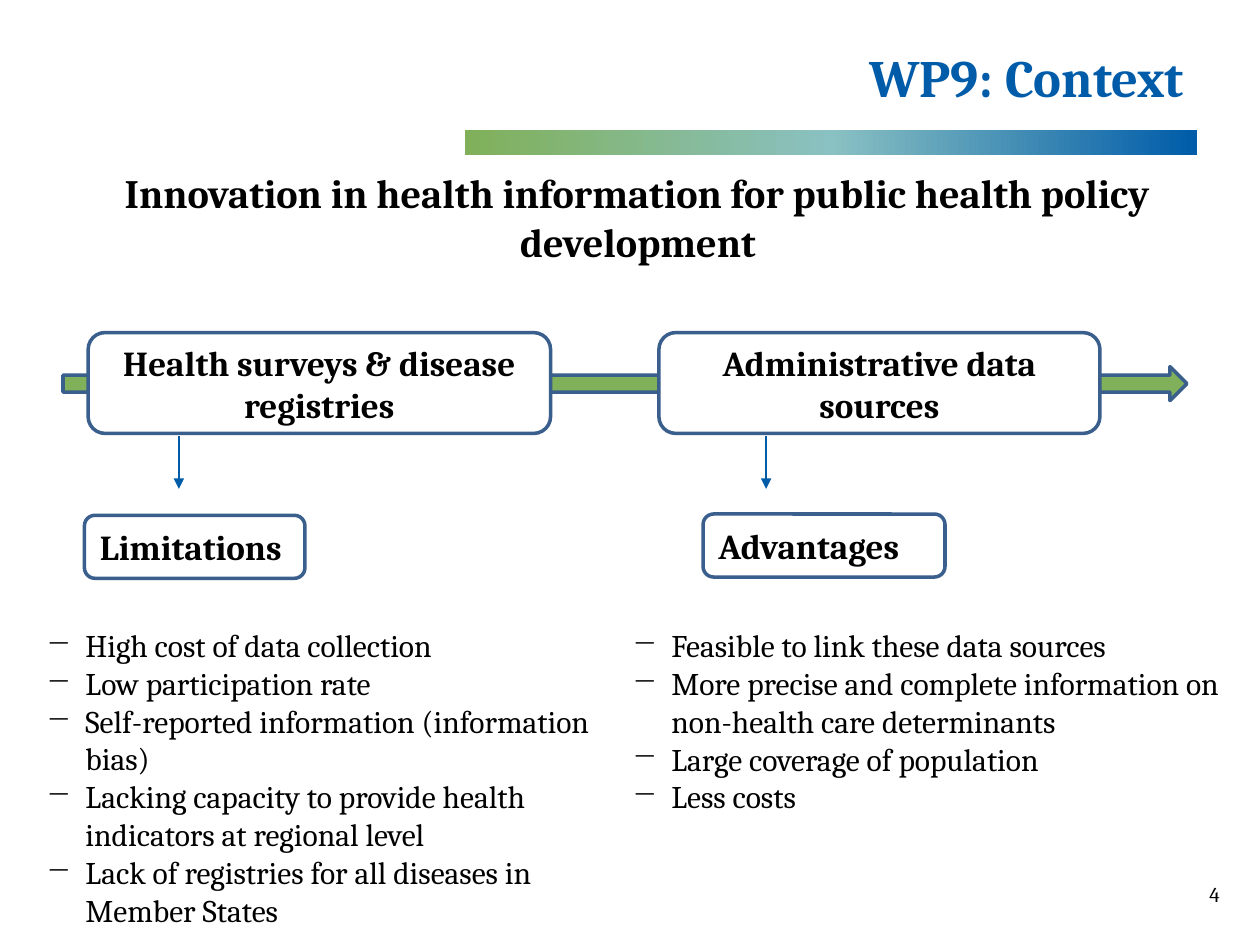
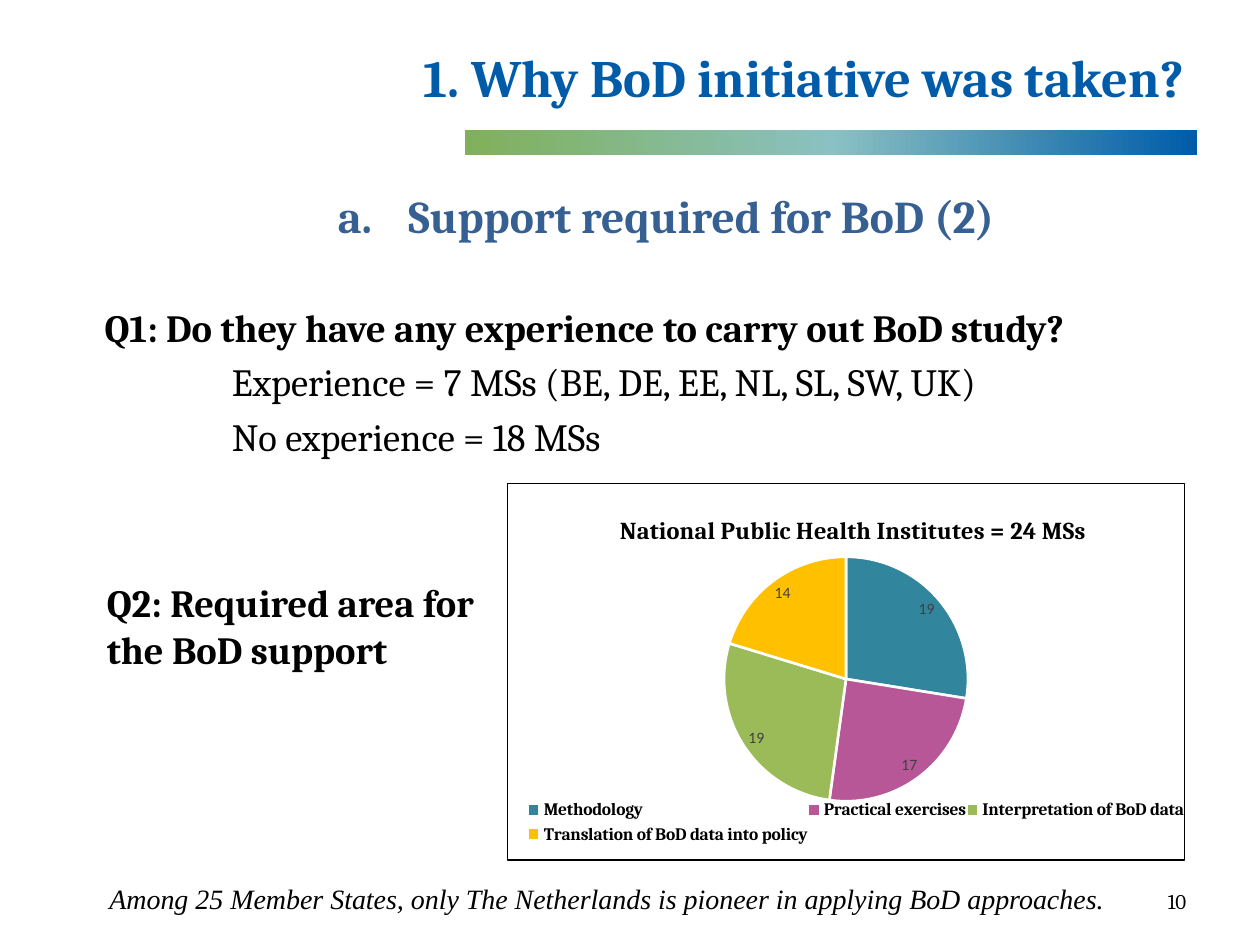
import copy

import pptx
import pptx.chart.data
import pptx.dml.color
import pptx.enum.chart
import pptx.enum.shapes
import pptx.enum.text
import pptx.oxml
import pptx.oxml.ns
import pptx.util
from pptx.util import Inches

ALIGN = pptx.enum.text.PP_ALIGN
ANCHOR = pptx.enum.text.MSO_ANCHOR
SHAPE = pptx.enum.shapes.MSO_SHAPE
qn = pptx.oxml.ns.qn

BLUE, GREEN, TEAL = "005CA9", "80B059", "8AC1C2"
OUTLINE, HEADING = "3A5F8C", "376092"
BLACK, WHITE, GREY = "000000", "FFFFFF", "404040"
SLICES = ["31859C", "B75797", "9BBB59", "FFC000"]

DASH = ("a:buChar", {"char": "─"})
LETTER = ("a:buAutoNum", {"type": "alphaLcPeriod"})
NO_BULLET = ("a:buNone", {})


def rgb(colour):
    return pptx.dml.color.RGBColor.from_string(colour)


def add_xml(parent, tag, **attributes):
    child = pptx.oxml.parse_xml(f"<{tag} {pptx.oxml.ns.nsdecls(tag[0])}/>")
    for name, value in attributes.items():
        child.set(name, str(value))
    parent.append(child)
    return child


class Builder:
    """House style plus the page being built."""

    font = "Cambria"

    def __init__(self):
        self.deck = pptx.Presentation()
        self.deck.slide_width = Inches(10)
        self.deck.slide_height = Inches(7.5)
        self.page = None

    def place(self, item, left, top, width, height):
        item.left, item.top = Inches(left), Inches(top)
        item.width, item.height = Inches(width), Inches(height)

    def style(self, font, size, colour=BLACK, bold=False, italic=False, name=None):
        font.name, font.size = name or self.font, pptx.util.Pt(size)
        font.bold, font.italic = bold, italic
        font.color.rgb = rgb(colour)

    def paragraph(self, para, text, size, align=ALIGN.LEFT, before=0,
                  margin=0, indent=0, bullet=NO_BULLET, **look):
        para.text = text
        para.alignment = align
        para.space_before = pptx.util.Pt(before)
        properties = para._p.get_or_add_pPr()
        properties.set("marL", str(Inches(margin)))
        properties.set("indent", str(Inches(indent)))
        add_xml(properties, bullet[0], **bullet[1])
        for span in para.runs:
            self.style(span.font, size, **look)

    def new_page(self, layout, title, number, number_at):
        self.page = self.deck.slides.add_slide(self.deck.slide_layouts[layout])
        self.gradient_bar()
        # Title
        heading = self.page.shapes.title
        self.place(heading, 0.5, 0.25, 9, 0.66)
        heading.text_frame.vertical_anchor = ANCHOR.BOTTOM
        heading.text_frame.auto_size = pptx.enum.text.MSO_AUTO_SIZE.NONE
        self.paragraph(heading.text_frame.paragraphs[0], title, 30,
                       align=ALIGN.RIGHT, colour=BLUE, bold=True)
        # Page number
        self.text(*number_at, 0.5, 0.3, [number], 12)

    def gradient_bar(self):
        bar = self.shape(SHAPE.RECTANGLE, 3.69, 1.03, 5.81, 0.2)
        bar.line.fill.background()
        bar.fill.gradient()
        bar.fill.gradient_angle = 0
        stops = bar.element.spPr.find(".//" + qn("a:gsLst"))
        stops.insert(1, copy.deepcopy(stops[0]))
        colours = (GREEN, TEAL, BLUE)
        for index, (stop, colour) in enumerate(zip(bar.fill.gradient_stops, colours)):
            stop.position = index / 2
            stop.color.rgb = rgb(colour)

    def shape(self, kind, left, top, width, height, fill=None):
        item = self.page.shapes.add_shape(
            kind, Inches(left), Inches(top), Inches(width), Inches(height))
        item.shadow.inherit = False
        if fill:
            item.fill.solid()
            item.fill.fore_color.rgb = rgb(fill)
        else:
            item.fill.background()
        item.line.color.rgb = rgb(OUTLINE)
        item.line.width = pptx.util.Pt(2)
        return item

    def label(self, text, left, top, width, height, fill=None, align=ALIGN.LEFT):
        box = self.shape(SHAPE.ROUNDED_RECTANGLE, left, top, width, height, fill)
        box.text_frame.word_wrap = True
        box.text_frame.vertical_anchor = ANCHOR.MIDDLE
        self.paragraph(box.text_frame.paragraphs[0], text, 20, align=align, bold=True)

    def text(self, left, top, width, height, lines, size, **look):
        box = self.page.shapes.add_textbox(
            Inches(left), Inches(top), Inches(width), Inches(height))
        frame = box.text_frame
        frame.word_wrap = True
        frame.text = "\n".join(lines)
        for para, line in zip(frame.paragraphs, lines):
            self.paragraph(para, line, size, **look)

    def down_arrow(self, x, top, bottom):
        arrow = self.page.shapes.add_connector(
            pptx.enum.shapes.MSO_CONNECTOR.STRAIGHT,
            Inches(x), Inches(top), Inches(x), Inches(bottom))
        arrow.line.color.rgb = rgb(BLUE)
        arrow.line.width = pptx.util.Pt(1.5)
        add_xml(arrow.line._get_or_add_ln(), "a:tailEnd", type="triangle")
        add_xml(arrow.element.spPr, "a:effectLst")

    def body(self, left, top, width, height, lines):
        holder = self.page.placeholders[1]
        self.place(holder, left, top, width, height)
        frame = holder.text_frame
        frame.auto_size = pptx.enum.text.MSO_AUTO_SIZE.NONE
        frame.text = "\n".join(line["text"] for line in lines)
        for para, line in zip(frame.paragraphs, lines):
            self.paragraph(para, **line)

    def pie(self, left, top, width, height, title, values):
        data = pptx.chart.data.CategoryChartData()
        data.categories = list(values)
        data.add_series("Series 1", list(values.values()))
        chart = self.page.shapes.add_chart(
            pptx.enum.chart.XL_CHART_TYPE.PIE, Inches(left), Inches(top),
            Inches(width), Inches(height), data).chart
        self.style(chart.font, 10, name="Calibri")

        # Title and legend
        chart.has_title = True
        heading = chart.chart_title.text_frame
        heading.text = title
        self.style(heading.paragraphs[0].runs[0].font, 14, bold=True)
        chart.has_legend = True
        chart.legend.position = pptx.enum.chart.XL_LEGEND_POSITION.BOTTOM
        chart.legend.include_in_layout = False
        self.style(chart.legend.font, 10, bold=True)

        # Slices and their values
        plot = chart.plots[0]
        plot.vary_by_categories = True
        for index, colour in enumerate(SLICES):
            piece = plot.series[0].points[index].format
            piece.fill.solid()
            piece.fill.fore_color.rgb = rgb(colour)
            piece.line.color.rgb = rgb(WHITE)
            piece.line.width = pptx.util.Pt(1.5)
        labels = plot.series[0].data_labels
        labels.show_value = True
        labels.position = pptx.enum.chart.XL_LABEL_POSITION.BEST_FIT
        self.style(labels.font, 9, colour=GREY, name="Calibri")

        # Positions inside the frame, as shares of its size
        root = chart.element.find(qn("c:chart"))
        self.chart_layout(root.find(qn("c:title")), 1, x=0.16, y=0.07)
        self.chart_layout(root.find(qn("c:plotArea")), 0, inner=True,
                          x=0.32, y=0.19, w=0.36, h=0.66)
        self.chart_layout(root.find(qn("c:legend")), 1,
                          x=0.03, y=0.83, w=0.97, h=0.14)
        self.chart_border(root)

    def chart_layout(self, part, index, inner=False, **shares):
        for old in part.findall(qn("c:layout")):
            part.remove(old)
        layout = add_xml(part, "c:layout")
        part.insert(index, layout)
        manual = add_xml(layout, "c:manualLayout")
        if inner:
            add_xml(manual, "c:layoutTarget", val="inner")
        for side in "xy":
            add_xml(manual, f"c:{side}Mode", val="edge")
        for side, share in shares.items():
            add_xml(manual, f"c:{side}", val=share)

    def chart_border(self, root):
        frame = add_xml(root, "c:spPr")
        root.addnext(frame)
        line = add_xml(frame, "a:ln", w=pptx.util.Pt(0.75))
        add_xml(add_xml(line, "a:solidFill"), "a:srgbClr", val=BLACK)


def context_page(build):
    build.new_page(5, "WP9: Context", "4", (9.5, 6.95))
    build.text(0.73, 1.29, 8.67, 0.88,
               ["Innovation in health information for public health policy development"],
               23, align=ALIGN.CENTER, bold=True)

    # Timeline with the two kinds of source
    build.shape(SHAPE.RIGHT_ARROW, 0.5, 2.91, 8.92, 0.27, GREEN)
    for source, left, width in (("Health surveys & disease registries", 0.7, 3.67),
                                ("Administrative data sources", 5.23, 3.5)):
        build.label(source, left, 2.64, width, 0.8, WHITE, ALIGN.CENTER)
    for x in (1.42, 6.08):
        build.down_arrow(x, 3.46, 3.88)
    build.label("Limitations", 0.67, 4.09, 1.75, 0.5)
    build.label("Advantages", 5.58, 4.08, 1.92, 0.5)

    # Lists
    limitations = ["High cost of data collection",
                   "Low participation rate",
                   "Self-reported information (information bias)",
                   "Lacking capacity to provide health indicators at regional level",
                   "Lack of registries for all diseases in Member States"]
    advantages = ["Feasible to link these data sources",
                  "More precise and complete information on non-health care determinants",
                  "Large coverage of population",
                  "Less costs"]
    for left, width, height, points in ((0.27, 4.72, 2.83, limitations),
                                        (4.92, 5.08, 1.92, advantages)):
        build.text(left, 4.92, width, height, points, 18,
                   margin=0.31, indent=-0.31, bullet=DASH)


def support_page(build):
    build.new_page(1, "1. Why BoD initiative was taken?", "10", (9.17, 7))

    # Heading and first question
    answer = dict(size=22, before=5, margin=1.54)
    build.body(0.2, 1.44, 9.64, 6.06, [
        dict(text="Support required for BoD (2)", size=26, align=ALIGN.CENTER,
             margin=1.1, indent=-0.56, bullet=LETTER, colour=HEADING, bold=True),
        dict(text="Q1: Do they have any experience to carry out BoD study?",
             size=22, before=35, margin=0.53, bold=True),
        dict(text="Experience = 7 MSs (BE, DE, EE, NL, SL, SW, UK)", **answer),
        dict(text="No experience = 18 MSs", **answer)])

    # Second question
    build.text(0.75, 4.55, 3.17, 0.85, ["Q2: Required area for the BoD support"],
               22, bold=True)
    build.pie(4.02, 3.83, 5.41, 3, "National Public Health Institutes = 24 MSs",
              {"Methodology": 19, "Practical exercises": 17,
               "Interpretation of BoD data": 19,
               "Translation of BoD data into policy": 14})
    build.text(0.77, 6.95, 8.67, 0.37,
               ["Among 25 Member States, only The Netherlands is pioneer in "
                "applying BoD approaches."],
               16, italic=True, name="Times New Roman")


def main():
    build = Builder()
    context_page(build)
    support_page(build)
    build.deck.save("out.pptx")


if __name__ == "__main__":
    main()
